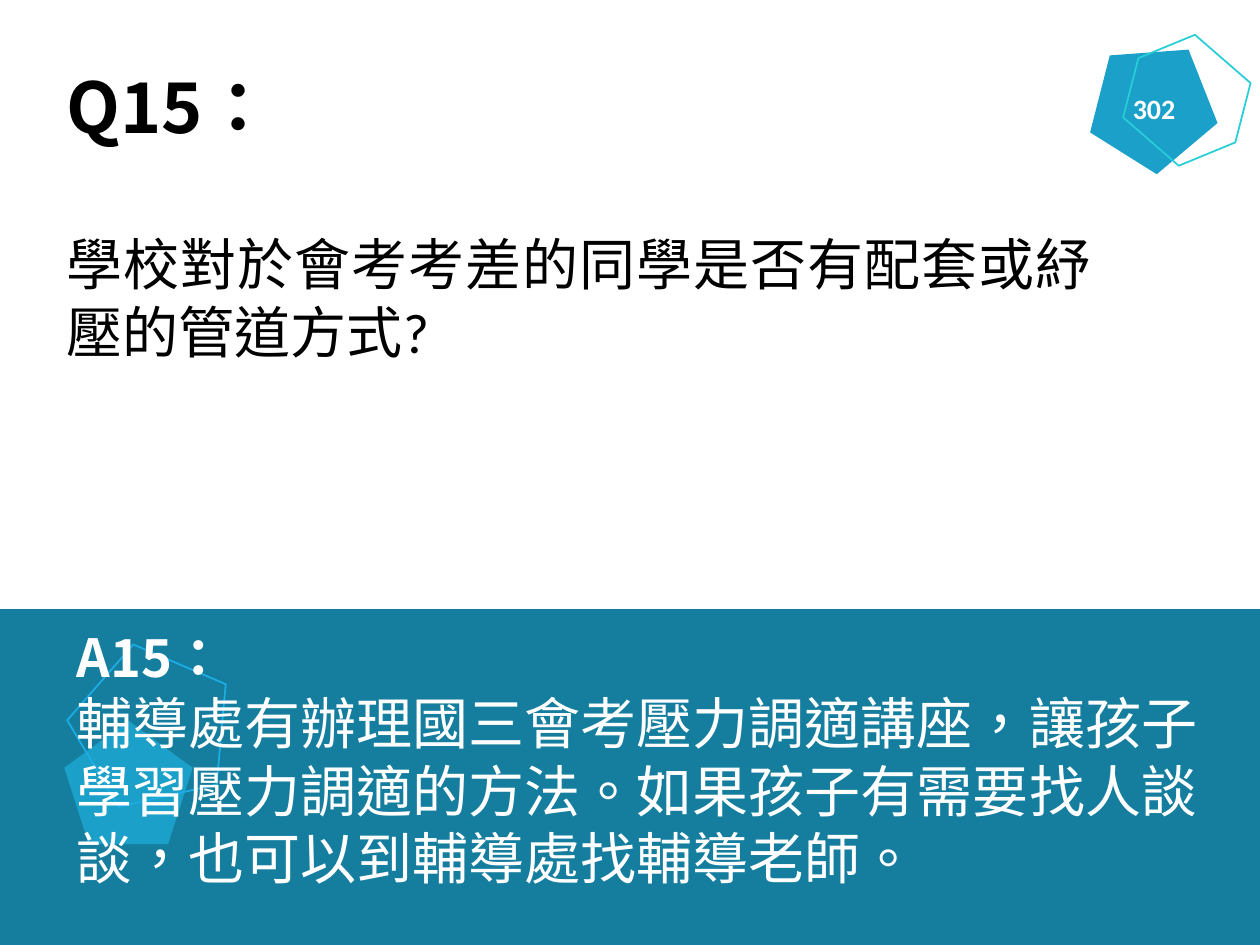
"""Build the Q15 question-and-answer slide."""
from lxml.etree import SubElement
from pptx import Presentation
from pptx.dml.color import RGBColor
from pptx.enum.lang import MSO_LANGUAGE_ID as Language
from pptx.enum.shapes import MSO_SHAPE as Shape
from pptx.enum.text import PP_ALIGN as Align
from pptx.oxml.ns import qn
from pptx.util import Pt

WHITE = RGBColor(0xFF, 0xFF, 0xFF)
BLACK = RGBColor(0x00, 0x00, 0x00)
BAND = RGBColor(0x15, 0x7E, 0x9F)
PENTAGON = RGBColor(0x1B, 0xA0, 0xC9)
BLUE = RGBColor(0x1C, 0xAD, 0xE4)
TURQUOISE = RGBColor(0x27, 0xCE, 0xD7)
CJK_FONT = "Noto Sans CJK SC"
LATIN_FONT = "Calibri"
HEADING = {"name": CJK_FONT, "bold": True}
BODY = {"name": LATIN_FONT, "size": Pt(32), "bold": False}


def add_shape(slide, kind, bounds, fill=None, line=None, rotation=0):
    shape = slide.shapes.add_shape(kind, *map(Pt, bounds))
    shape.shadow.inherit = False
    shape.rotation = rotation
    if fill:
        shape.fill.solid()
        shape.fill.fore_color.rgb = fill
    else:
        shape.fill.background()
    if line:
        shape.line.color.rgb = line
        shape.line.width = Pt(1)
    else:
        shape.line.fill.background()


def add_box(slide, bounds, wrap=True):
    box = slide.shapes.add_textbox(*map(Pt, bounds))
    box.text_frame.word_wrap = wrap
    return box.text_frame


def format_para(para, values):
    for name, value in values.items():
        setattr(para, name, value)


def add_span(para, text, color, values):
    span = para.add_run()
    span.text = text
    span.font.color.rgb = color
    span.font.language_id = Language.TRADITIONAL_CHINESE
    for name, value in values.items():
        setattr(span.font, name, value)
    SubElement(span._r.get_or_add_rPr(), qn("a:ea"), typeface=CJK_FONT)


def add_question(slide):
    frame = add_box(slide, (31, 29.5, 600, 181.5))
    title = frame.paragraphs[0]
    format_para(title, {"line_spacing": Pt(51), "space_after": Pt(46.5)})
    add_span(title, "Q15：", BLACK, {**HEADING, "size": Pt(40)})
    question = frame.add_paragraph()
    format_para(question, {"line_spacing": Pt(39), "alignment": Align.JUSTIFY})
    add_span(question, "學校對於會考考差的同學是否有配套或紓壓的管道方式?", BLACK, BODY)


def add_answer(slide):
    para = add_box(slide, (36.7, 351.4, 669, 160)).paragraphs[0]
    format_para(para, {"line_spacing": Pt(38.5)})
    add_span(para, "A15：", WHITE, {**HEADING, "size": Pt(30)})
    para.add_line_break()
    add_span(
        para,
        "輔導處有辦理國三會考壓力調適講座，讓孩子學習壓力調適的方法。"
        "如果孩子有需要找人談談，也可以到輔導處找輔導老師。",
        WHITE,
        BODY,
    )


def add_number(slide):
    para = add_box(slide, (640, 49, 39, 26.6), wrap=False).paragraphs[0]
    format_para(para, {"alignment": Align.CENTER})
    add_span(para, "302", WHITE, {**BODY, "size": Pt(16), "bold": True})


def main():
    deck = Presentation()
    deck.slide_width, deck.slide_height = Pt(720), Pt(540)
    slide = deck.slides.add_slide(deck.slide_layouts[6])
    add_shape(slide, Shape.RECTANGLE, (0, 348, 720, 192), fill=BAND)
    add_shape(slide, Shape.REGULAR_PENTAGON, (624.2, 23, 72.7, 70), fill=PENTAGON, rotation=32.1)
    add_shape(slide, Shape.REGULAR_PENTAGON, (36.7, 411.8, 73.4, 70.6), fill=PENTAGON)
    add_shape(slide, Shape.REGULAR_PENTAGON, (39.6, 367.2, 92.9, 88.6), line=BLUE, rotation=347.2)
    add_shape(slide, Shape.HEXAGON, (641.5, 26, 73.4, 62.6), line=TURQUOISE, rotation=41)
    add_question(slide)
    add_answer(slide)
    add_number(slide)
    deck.save("out.pptx")


if __name__ == "__main__":
    main()
